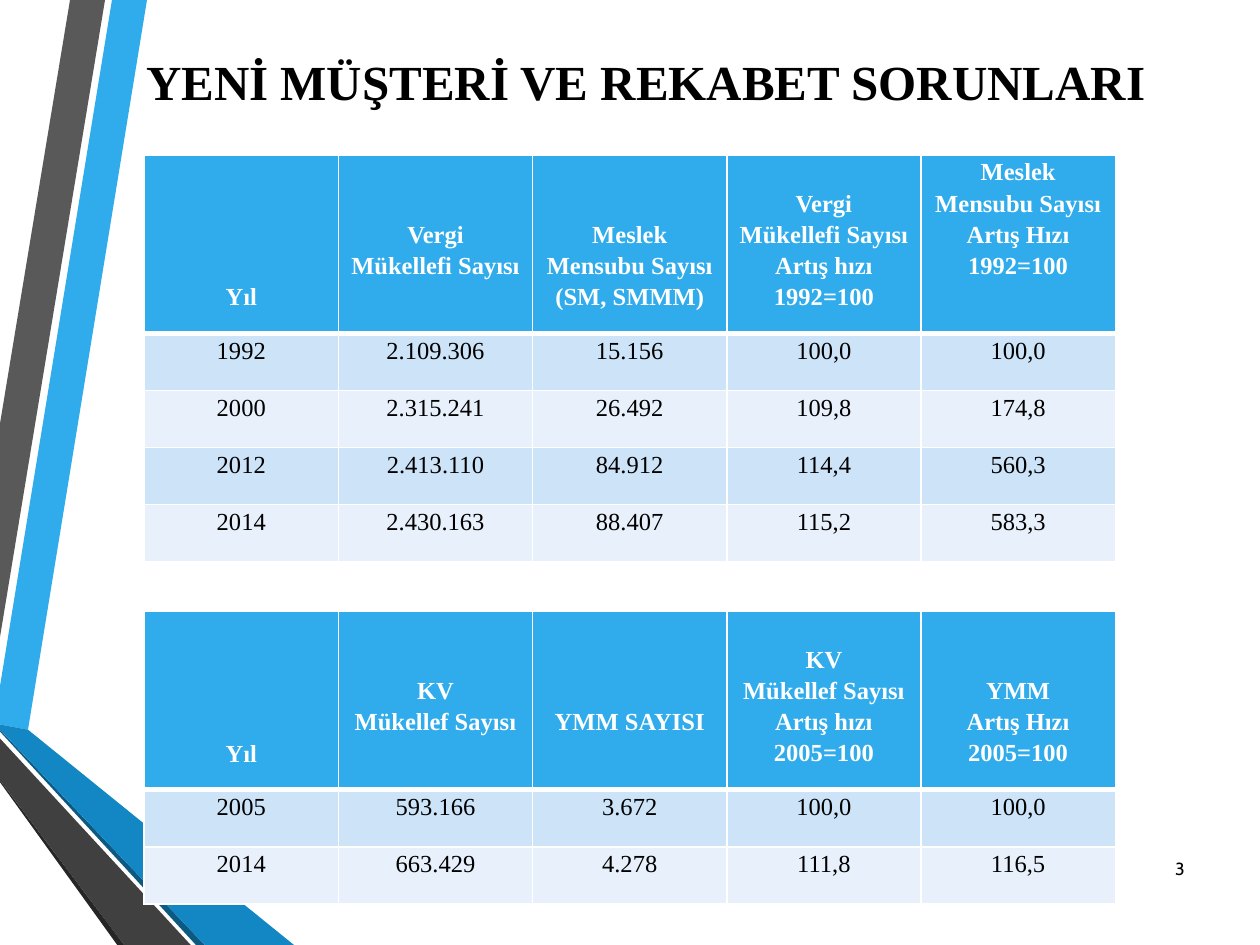
from dataclasses import dataclass

from lxml.etree import SubElement
from pptx import Presentation
from pptx.dml.color import RGBColor as Rgb
from pptx.enum.text import MSO_ANCHOR as Anchor, MSO_AUTO_SIZE as AutoSize, PP_ALIGN as Align
from pptx.oxml.ns import qn
from pptx.util import Pt


@dataclass(frozen=True)
class Theme:
    white: str = "FFFFFF"
    black: str = "000000"
    blue: str = "30ACEC"
    mid_blue: str = "1287C3"
    deep_blue: str = "0C5A82"
    light_gray: str = "595959"
    mid_gray: str = "404040"
    dark_gray: str = "262626"
    bands: tuple = ("CDE3F8", "E8F1FB")
    serif: str = "Times New Roman"
    sans: str = "Cabin"
    title_size: float = 28
    table_size: float = 14
    number_size: float = 10
    line_spacing: float = 1.15
    line_height: float = 17.85
    thin: float = 1
    thick: float = 3


class SlideBuilder:
    def __init__(self, deck, theme):
        self.theme = theme
        self.page = deck.slides.add_slide(deck.slide_layouts[5])

    def add_span(self, para, text, font, size, color, bold=False, align=Align.LEFT):
        para.alignment = align
        span = para.add_run()
        span.text = text
        span.font.name = font
        span.font.size = Pt(size)
        span.font.bold = bold
        span.font.color.rgb = Rgb.from_string(color)

    def title(self, text, left, top, width, height):
        box = self.page.shapes.title
        box.left, box.top = Pt(left), Pt(top)
        box.width, box.height = Pt(width), Pt(height)
        frame = box.text_frame
        frame.auto_size = AutoSize.NONE
        frame.word_wrap = True
        frame.vertical_anchor = Anchor.TOP
        theme = self.theme
        self.add_span(frame.paragraphs[0], text, theme.serif, theme.title_size,
                      theme.black, True)

    def page_number(self, text, left, top, width, height):
        box = self.page.shapes.add_textbox(Pt(left), Pt(top), Pt(width), Pt(height))
        frame = box.text_frame
        frame.word_wrap = True
        frame.vertical_anchor = Anchor.MIDDLE
        theme = self.theme
        self.add_span(frame.paragraphs[0], text, theme.sans, theme.number_size,
                      theme.black, align=Align.RIGHT)

    def ribbon(self, color, start, *points):
        builder = self.page.shapes.build_freeform(*start, scale=Pt(1))
        builder.add_line_segments(points, close=True)
        shape = builder.convert_to_shape()
        shape.shadow.inherit = False
        shape.fill.solid()
        shape.fill.fore_color.rgb = Rgb.from_string(color)
        shape.line.fill.background()

    def borders(self, cell, top, bottom):
        thin = self.theme.thin
        properties = cell._tc.get_or_add_tcPr()
        for side, width in (("L", thin), ("R", thin), ("T", top), ("B", bottom)):
            line = SubElement(properties, qn(f"a:ln{side}"), w=str(Pt(width)))
            fill = SubElement(line, qn("a:solidFill"))
            SubElement(fill, qn("a:srgbClr"), val=self.theme.white)

    def cell(self, cell, lines, fill, color, bold, lead=0, top=1, bottom=1):
        theme = self.theme
        self.borders(cell, top, bottom)
        cell.fill.solid()
        cell.fill.fore_color.rgb = Rgb.from_string(fill)
        cell.margin_left = cell.margin_right = Pt(5)
        cell.margin_top, cell.margin_bottom = Pt(lead * theme.line_height), 0
        frame = cell.text_frame
        for index, text in enumerate(lines):
            para = frame.add_paragraph() if index else frame.paragraphs[0]
            para.line_spacing = theme.line_spacing
            self.add_span(para, text, theme.serif, theme.table_size, color, bold, Align.CENTER)

    def table(self, left, top, width, header_height, row_height, headers, rows):
        theme = self.theme
        height = header_height + row_height * len(rows)
        table = self.page.shapes.add_table(
            len(rows) + 1, len(headers), Pt(left), Pt(top), Pt(width), Pt(height)).table
        table.horz_banding = False
        for column in table.columns:
            column.width = Pt(width / len(headers))
        for index, row in enumerate(table.rows):
            row.height = Pt(row_height if index else header_height)
        for column, (lead, lines) in enumerate(headers):
            self.cell(table.cell(0, column), lines, theme.blue, theme.white, True,
                      lead, theme.thin, theme.thick)
        for index, values in enumerate(rows):
            edge = theme.thin if index else theme.thick
            for column, value in enumerate(values):
                self.cell(table.cell(index + 1, column), [value], theme.bands[index % 2],
                          theme.black, False, top=edge)


def main():
    deck = Presentation()
    deck.slide_width, deck.slide_height = Pt(720), Pt(540)
    theme = Theme()
    slide = SlideBuilder(deck, theme)

    slide.ribbon(theme.blue, (0, 391.7), (0, 414), (15.8, 416.9), (84.4, 0), (64.1, 0))
    slide.ribbon(theme.light_gray, (59.8, 0), (39.6, 0), (0, 241.9), (0, 364.3))
    slide.ribbon(theme.dark_gray, (0, 445.7), (0, 447.1), (67, 540), (71.3, 540))
    slide.ribbon(theme.deep_blue, (0, 416.9), (0, 417.6), (112.3, 540), (117.4, 540))
    slide.ribbon(theme.mid_blue, (0, 416.9), (117.4, 540), (167.8, 540), (15.8, 416.9), (0, 414))
    slide.ribbon(theme.mid_gray, (0, 445.7), (71.3, 540), (108.7, 540), (0, 421.9))

    slide.title("YENİ MÜŞTERİ VE REKABET SORUNLARI", 76.3, 26, 590, 41)

    grid = {"left": 82.4, "width": 555, "header_height": 102, "row_height": 32.6}
    slide.table(top=88.6, **grid, headers=[
        (4, ["Yıl"]),
        (2, ["Vergi", "Mükellefi Sayısı"]),
        (2, ["Meslek Mensubu Sayısı (SM, SMMM)"]),
        (1, ["Vergi", "Mükellefi Sayısı", "Artış hızı", "1992=100"]),
        (0, ["Meslek Mensubu Sayısı Artış Hızı", "1992=100"]),
    ], rows=[
        ("1992", "2.109.306", "15.156", "100,0", "100,0"),
        ("2000", "2.315.241", "26.492", "109,8", "174,8"),
        ("2012", "2.413.110", "84.912", "114,4", "560,3"),
        ("2014", "2.430.163", "88.407", "115,2", "583,3"),
    ])
    slide.table(top=349.3, **grid, headers=[
        (4, ["Yıl"]),
        (2, ["KV", "Mükellef Sayısı"]),
        (3, ["YMM SAYISI"]),
        (1, ["KV", "Mükellef Sayısı", "Artış hızı", "2005=100"]),
        (2, ["YMM", "Artış Hızı", "2005=100"]),
    ], rows=[
        ("2005", "593.166", "3.672", "100,0", "100,0"),
        ("2014", "663.429", "4.278", "111,8", "116,5"),
    ])

    slide.page_number("3", 651.6, 481.7, 32.4, 28.8)
    deck.save("out.pptx")


if __name__ == "__main__":
    main()
